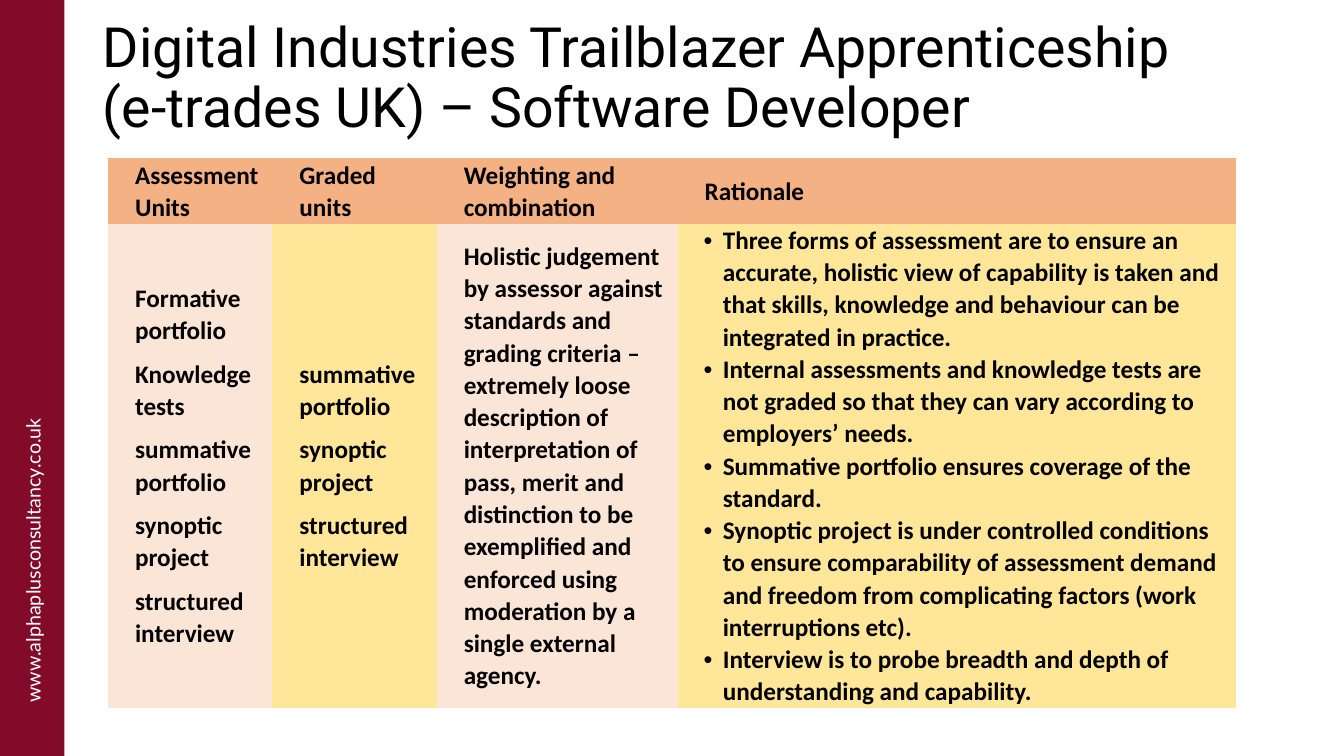
from dataclasses import dataclass

from lxml import etree
from pptx import Presentation
from pptx.dml.color import RGBColor
from pptx.enum.shapes import MSO_SHAPE
from pptx.enum.text import MSO_ANCHOR, MSO_AUTO_SIZE, PP_ALIGN
from pptx.oxml.ns import qn
from pptx.util import Inches, Pt

RECT = MSO_SHAPE.RECTANGLE
MIDDLE = MSO_ANCHOR.MIDDLE
LEFT, CENTER = PP_ALIGN.LEFT, PP_ALIGN.CENTER
NO_FIT = MSO_AUTO_SIZE.NONE
PLAIN_GRID = "{2D5ABB26-0587-4C30-8999-92F81FD0307C}"


@dataclass(frozen=True)
class Theme:
    side: str = "810B29"
    head: str = "F4B183"
    pink: str = "FBE5D6"
    gold: str = "FFE699"
    ink: str = "000000"
    white: str = "FFFFFF"
    title: float = 39.6
    cell: float = 18
    site: float = 14


THEME = Theme()

TITLE = "Digital Industries Trailblazer Apprenticeship\v(e-trades UK) – Software Developer"
SITE = "www.alphaplusconsultancy.co.uk"
GRADED = ["summative portfolio", "synoptic project", "structured interview"]
# Heading, column width, body fill, bulleted, body text
COLUMNS = [
    ("Assessment Units", 1.63, THEME.pink, False,
     ["Formative portfolio", "Knowledge tests"] + GRADED),
    ("Graded units", 1.63, THEME.gold, False, GRADED),
    ("Weighting and combination", 2.39, THEME.pink, False, [
        "Holistic judgement by assessor against standards and grading criteria – "
        "extremely loose description of interpretation of pass, merit and distinction "
        "to be exemplified and enforced using moderation by a single external agency.",
    ]),
    ("Rationale", 5.54, THEME.gold, True, [
        "Three forms of assessment are to ensure an accurate, holistic view of capability "
        "is taken and that skills, knowledge and behaviour can be integrated in practice.",
        "Internal assessments and knowledge tests are not graded so that they can vary "
        "according to employers’ needs.",
        "Summative portfolio ensures coverage of the standard.",
        "Synoptic project is under controlled conditions to ensure comparability of "
        "assessment demand and freedom from complicating factors (work interruptions etc).",
        "Interview is to probe breadth and depth of understanding and capability.",
    ]),
]
ROWS = [0.65, 4.8]


def rgb(code):
    return RGBColor.from_string(code)


def write(frame, lines, *, size, font="Calibri", color=THEME.ink, bold=False,
          align=LEFT, line=1.0, after=0, indent=0, hang=0, bullet=False):
    """Fill a text frame with one paragraph per line; indents are in inches."""
    for i, text in enumerate(lines):
        para = frame.paragraphs[0] if i == 0 else frame.add_paragraph()
        para.text = text
        para.alignment = align
        para.line_spacing = line
        para.space_before = Pt(0)
        para.space_after = Pt(after)
        props = para._p.get_or_add_pPr()
        props.set("marL", str(Inches(indent)))
        props.set("indent", str(Inches(-hang)))
        if bullet:
            etree.SubElement(props, qn("a:buFont")).set("typeface", "Arial")
            etree.SubElement(props, qn("a:buChar")).set("char", "•")
        for run in para.runs:
            run.font.name = font
            run.font.size = Pt(size)
            run.font.bold = bold
            run.font.color.rgb = rgb(color)


def add_side(slide):
    bar = slide.shapes.add_shape(RECT, 0, 0, Inches(0.64), Inches(7.5))
    bar.shadow.inherit = False
    bar.fill.solid()
    bar.fill.fore_color.rgb = rgb(THEME.side)
    bar.line.fill.background()

    site = slide.shapes.add_textbox(Inches(-1.29), Inches(5.36), Inches(3.23), Inches(0.4))
    site.rotation = 270
    frame = site.text_frame
    frame.word_wrap = True
    frame.vertical_anchor = MIDDLE
    write(frame, [SITE], size=THEME.site, font="Lato", color=THEME.white, align=CENTER)


def add_title(slide):
    title = slide.shapes.title
    title.left, title.top = Inches(0.92), Inches(0.4)
    title.width, title.height = Inches(11.5), Inches(1.45)
    frame = title.text_frame
    frame.auto_size = NO_FIT
    frame.vertical_anchor = MIDDLE
    frame.margin_bottom = Inches(0.72)
    write(frame, [TITLE], size=THEME.title, font="Roboto", line=0.9)


def fill_cell(cell, lines, fill, bullet=False):
    cell.fill.solid()
    cell.fill.fore_color.rgb = rgb(fill)
    cell.vertical_anchor = MIDDLE
    cell.margin_left = cell.margin_right = Inches(0.07)
    cell.margin_top = cell.margin_bottom = 0
    if bullet:
        form = dict(indent=0.38, hang=0.19, bullet=True)
    else:
        form = dict(indent=0.2, after=8)
    write(cell.text_frame, lines, size=THEME.cell, bold=True, line=1.05, **form)


def add_grid(slide):
    width = sum(col[1] for col in COLUMNS)
    shape = slide.shapes.add_table(len(ROWS), len(COLUMNS), Inches(1.07), Inches(1.57),
                                   Inches(width), Inches(sum(ROWS)))
    table = shape.table
    table.horz_banding = False
    table._tbl.tblPr.find(qn("a:tableStyleId")).text = PLAIN_GRID
    for row, height in zip(table.rows, ROWS):
        row.height = Inches(height)
    for i, (head, wide, fill, bullet, lines) in enumerate(COLUMNS):
        table.columns[i].width = Inches(wide)
        fill_cell(table.cell(0, i), [head], THEME.head)
        fill_cell(table.cell(1, i), lines, fill, bullet)


def main():
    deck = Presentation()
    deck.slide_width, deck.slide_height = Inches(13.33), Inches(7.5)
    slide = deck.slides.add_slide(deck.slide_layouts[5])
    add_side(slide)
    add_title(slide)
    add_grid(slide)
    deck.save("out.pptx")


if __name__ == "__main__":
    main()
